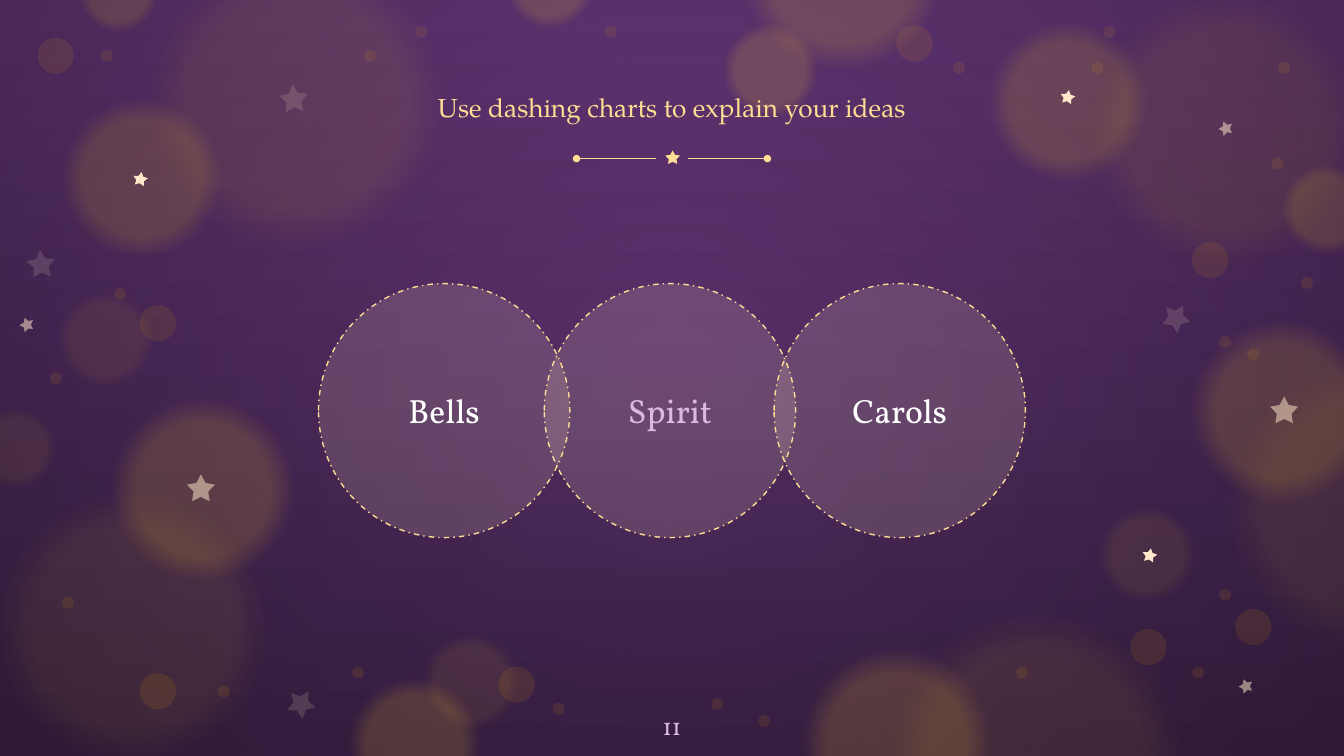
from lxml import etree
from pptx import Presentation
from pptx import util as u
from pptx.dml.color import RGBColor
from pptx.enum import dml, shapes, text
from pptx.oxml import parse_xml
from pptx.oxml.ns import nsdecls, qn

GOLD, CREAM, LILAC, WHITE = "FFDD92", "FFE8CA", "DCB9E3", "FFFFFF"
CIRCLE = ('<a:path path="circle"><a:fillToRect l="50000" t="50000" '
          'r="50000" b="50000"/></a:path>')
DOWNWARD = '<a:lin ang="5400000" scaled="0"/>'


def paint(fill, color, alpha=100, holder=None, stops=None, direction=CIRCLE):
    """Fill with one colour, or with stops of (position, colour, alpha).

    The holder is the XML parent of the fill, needed for alpha and stops.
    """
    fill.solid()
    fill.fore_color.rgb = RGBColor.from_string(color)
    if stops:
        marks = "".join(
            f'<a:gs pos="{place * 1000}"><a:srgbClr val="{tone}">'
            f'<a:alpha val="{opacity * 1000}"/></a:srgbClr></a:gs>'
            for place, tone, opacity in stops)
        solid = holder.find(qn("a:solidFill"))
        holder.replace(solid, parse_xml(
            f'<a:gradFill {nsdecls("a")} rotWithShape="1"><a:gsLst>{marks}'
            f'</a:gsLst>{direction}</a:gradFill>'))
    elif alpha < 100:
        tone = holder.find(qn("a:solidFill")).find(qn("a:srgbClr"))
        etree.SubElement(tone, qn("a:alpha")).set("val", str(alpha * 1000))


def write(box, words, size, color, font="Vollkorn", anchor=text.MSO_ANCHOR.TOP):
    frame = box.text_frame
    frame.word_wrap = True
    frame.vertical_anchor = anchor
    frame.margin_left = frame.margin_right = u.Inches(0.1)
    frame.margin_top = frame.margin_bottom = u.Inches(0.1)
    para = frame.paragraphs[0]
    para.alignment = text.PP_ALIGN.CENTER
    span = para.add_run()
    span.text = words
    span.font.name = font
    span.font.size = u.Pt(size)
    paint(span.font.fill, color)


deck = Presentation()
deck.slide_width = u.Inches(10)
deck.slide_height = u.Inches(10) * 9 // 16
page = deck.slides.add_slide(deck.slide_layouts[6])
kinds = shapes.MSO_SHAPE

background = page.background.fill
background.solid()
paint(background, "69397D", holder=page.element.find(".//" + qn("p:bgPr")),
      stops=[(0, "69397D", 100), (100, "40234C", 100)], direction=DOWNWARD)

# Soft glows (left, top, diameter), faint ones behind brighter ones
faint_glows = [
    (-0.19, 3.03, 0.61), (0.42, 2.16, 0.73), (1.07, -0.37, 2.26),
    (-0.06, 3.62, 2.09), (3.14, 4.71, 0.73), (6.58, 4.52, 2.26),
    (9.1, 2.66, 2.2), (8.17, 3.76, 0.73), (8.08, -0.08, 2.09)]
bright_glows = [
    (0.58, -0.36, 0.61), (5.49, -1.01, 1.56), (5.37, 0.16, 0.73),
    (0.44, 0.71, 1.23), (0.8, 2.94, 1.41), (2.58, 5.03, 1.01),
    (5.94, 4.8, 1.46), (8.84, 2.36, 1.41), (9.53, 1.22, 0.68),
    (7.33, 0.14, 1.23), (3.75, -0.46, 0.68)]
for glows, opacity in [(faint_glows, 10), (bright_glows, 19)]:
    for left, top, diameter in glows:
        glow = page.shapes.add_shape(
            kinds.OVAL, u.Inches(left), u.Inches(top),
            u.Inches(diameter), u.Inches(diameter))
        glow.shadow.inherit = False
        glow.line.fill.background()
        paint(glow.fill, "FFCC3E", holder=glow.element.spPr,
              stops=[(place, "FFCC3E", amount) for place, amount in
                     [(0, opacity), (50, opacity), (68, 0), (100, 0)]])

vignette = page.shapes.add_shape(
    kinds.RECTANGLE, 0, 0, deck.slide_width, deck.slide_height)
vignette.shadow.inherit = False
vignette.line.fill.background()
paint(vignette.fill, "000000", holder=vignette.element.spPr,
      stops=[(0, "000000", 0), (100, "000000", 30)])

# Crisp dots (left, top)
large_dots = [
    (0.28, 0.28), (1.04, 2.27), (1.04, 5.01), (3.71, 4.96),
    (8.41, 4.68), (6.67, 0.19), (8.87, 1.8), (9.19, 4.53)]
small_dots = [
    (0.85, 2.14), (0.37, 2.77), (0.75, 0.37), (1.62, 5.1), (0.46, 4.44),
    (2.62, 4.96), (4.11, 5.23), (3.09, 0.19), (2.71, 0.37), (5.64, 5.32),
    (5.29, 5.19), (7.09, 0.46), (4.5, 0.19), (7.56, 4.96), (8.87, 4.96),
    (9.07, 4.38), (8.21, 0.19), (8.12, 0.46), (9.51, 0.46), (9.46, 1.17),
    (9.07, 2.5), (9.68, 2.06), (9.28, 2.59)]
for dots, diameter in [(large_dots, 0.27), (small_dots, 0.09)]:
    for left, top in dots:
        dot = page.shapes.add_shape(
            kinds.OVAL, u.Inches(left), u.Inches(top),
            u.Inches(diameter), u.Inches(diameter))
        dot.shadow.inherit = False
        dot.line.fill.background()
        paint(dot.fill, "F1AC00", 10, dot.element.spPr)

# Stars: width, height, rotation, colour, alpha, places
star_groups = [
    (0.21, 0.2, 0, CREAM, 52, [(1.39, 3.53), (9.45, 2.95)]),
    (0.11, 0.1, 9.9, CREAM, 100, [(0.99, 1.28), (8.5, 4.08), (7.89, 0.67)]),
    (0.11, 0.1, 124.3, CREAM, 52, [(0.15, 2.37), (9.22, 5.06), (9.07, 0.91)]),
    (0.21, 0.2, 30.5, CREAM, 15, [(2.14, 5.13), (8.65, 2.26)]),
    (0.21, 0.2, 355.7, CREAM, 15, [(2.08, 0.63), (0.2, 1.86)]),
    (0.11, 0.1, 0, GOLD, 100, [(4.95, 1.12)])]
for width, height, rotation, color, alpha, places in star_groups:
    for left, top in places:
        star = page.shapes.add_shape(
            kinds.STAR_5_POINT, u.Inches(left), u.Inches(top),
            u.Inches(width), u.Inches(height))
        star.adjustments[0] = 0.26
        star.rotation = rotation
        star.shadow.inherit = False
        star.line.fill.background()
        paint(star.fill, color, alpha, star.element.spPr)

# Divider lines, each with a small round outer end
for start, end, cap in [(5.12, 5.71, "tailEnd"), (4.29, 4.88, "headEnd")]:
    divider = page.shapes.add_connector(
        shapes.MSO_CONNECTOR.STRAIGHT, u.Inches(start), u.Inches(1.18),
        u.Inches(end), u.Inches(1.18))
    divider.line.width = u.Pt(0.75)
    paint(divider.line.fill, GOLD)
    properties = divider.element.spPr
    etree.SubElement(properties.find(qn("a:ln")), qn("a:" + cap),
                     type="oval", w="sm", len="sm")
    etree.SubElement(properties, qn("a:effectLst"))

title = page.shapes.add_textbox(
    u.Inches(2.03), u.Inches(0.58), u.Inches(5.94), u.Inches(0.5))
write(title, "Use dashing charts to explain your ideas", 14, GOLD,
      font="TeX Gyre Pagella")

for label, left, color in [
        ("Spirit", 4.05, LILAC), ("Bells", 2.37, WHITE), ("Carols", 5.76, WHITE)]:
    circle = page.shapes.add_shape(
        kinds.OVAL, u.Inches(left), u.Inches(2.11), u.Inches(1.87), u.Inches(1.89))
    circle.shadow.inherit = False
    paint(circle.fill, CREAM, 15, circle.element.spPr)
    paint(circle.line.fill, GOLD)
    circle.line.width = u.Pt(0.75)
    circle.line.dash_style = dml.MSO_LINE.DASH_DOT
    write(circle, label, 18, color, anchor=text.MSO_ANCHOR.MIDDLE)

number = page.shapes.add_textbox(
    u.Inches(4.7), u.Inches(5.19), u.Inches(0.6), u.Inches(0.43))
write(number, "11", 13, LILAC)

deck.save("out.pptx")
